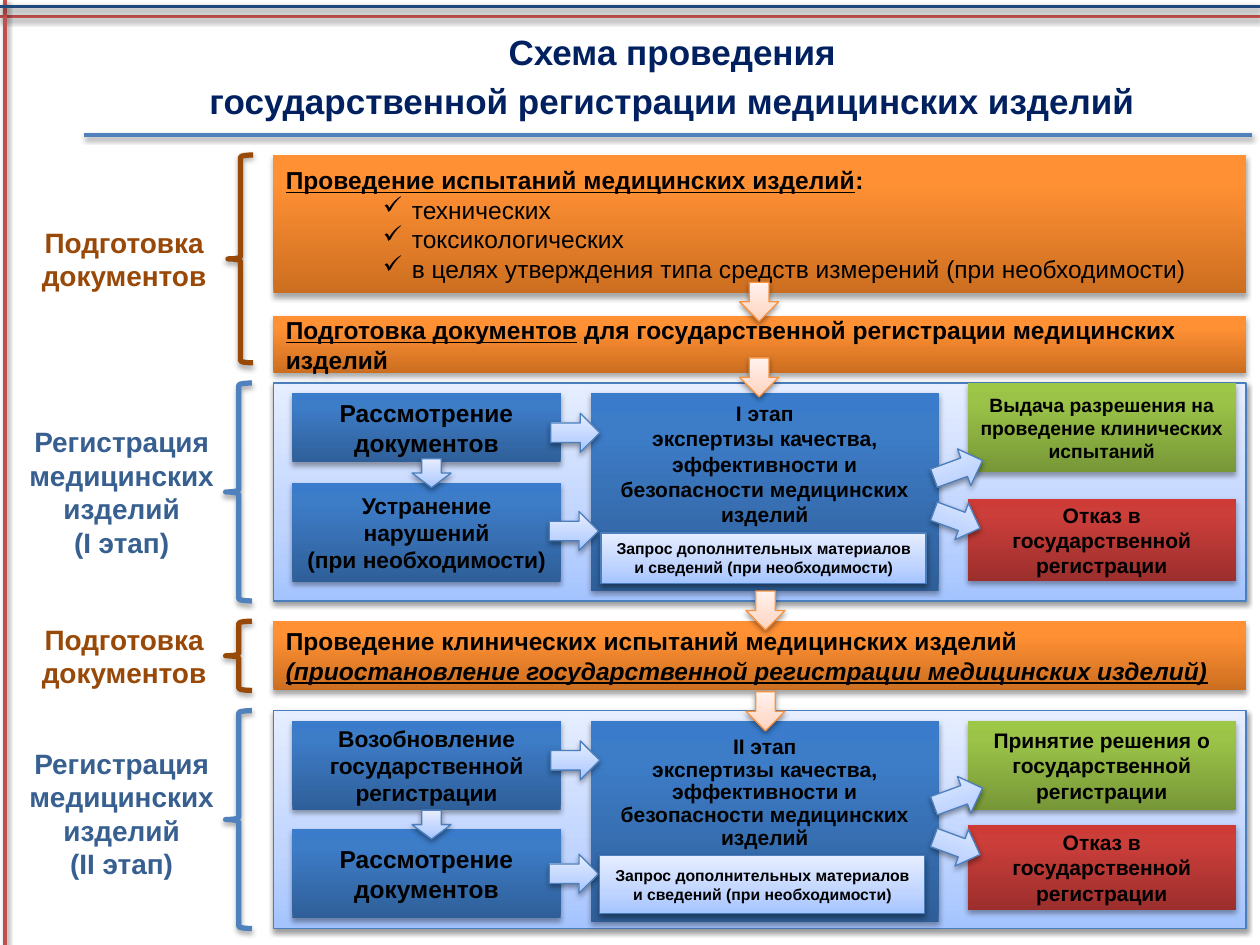
from collections import namedtuple

from lxml.etree import SubElement
from pptx import Presentation
from pptx.dml.color import RGBColor
from pptx.enum.shapes import MSO_CONNECTOR, MSO_SHAPE
from pptx.enum.text import MSO_ANCHOR, PP_ALIGN
from pptx.oxml.ns import qn
from pptx.util import Inches, Pt

BLACK = RGBColor(0x00, 0x00, 0x00)
NAVY = RGBColor(0x00, 0x20, 0x60)
DARK_BLUE = RGBColor(0x1F, 0x49, 0x7D)
LABEL_BLUE = RGBColor(0x37, 0x60, 0x91)
ACCENT_BLUE = RGBColor(0x4F, 0x81, 0xBD)
BORDER_BLUE = RGBColor(0x4B, 0x7E, 0xBC)
BORDER_ORANGE = RGBColor(0xF6, 0x92, 0x40)
BROWN = RGBColor(0x98, 0x48, 0x07)
RED_LINE = RGBColor(0xC0, 0x50, 0x4D)

Look = namedtuple("Look", "colors middle border")
ORANGE = Look((RGBColor(0xCC, 0x6E, 0x20), RGBColor(0xFF, 0x90, 0x34),
               RGBColor(0xFF, 0x91, 0x36)), 80, None)
BLUE = Look((RGBColor(0x2F, 0x5F, 0x99), RGBColor(0x3D, 0x7C, 0xC7),
             RGBColor(0x3A, 0x7C, 0xCB)), 80, None)
GREEN = Look((RGBColor(0x77, 0x97, 0x37), RGBColor(0x9B, 0xC3, 0x48),
              RGBColor(0x9D, 0xC7, 0x46)), 80, None)
RED = Look((RGBColor(0x9C, 0x2F, 0x2D), RGBColor(0xCB, 0x3E, 0x3A),
            RGBColor(0xCE, 0x3B, 0x37)), 80, None)
PALE_BLUE = Look((RGBColor(0xA4, 0xC4, 0xFF), RGBColor(0xBF, 0xD4, 0xFF),
                  RGBColor(0xE6, 0xEE, 0xFF)), 35, BORDER_BLUE)
PEACH = Look((RGBColor(0xFF, 0xD2, 0xBD), RGBColor(0xFF, 0xDE, 0xD0),
              RGBColor(0xFF, 0xF2, 0xED)), 35, BORDER_ORANGE)

Run = namedtuple("Run", "text bold italic underline", defaults=(True, False, False))
Bullet = namedtuple("Bullet", "text")

Stage = namedtuple("Stage", "top label_top number first second expertise_height spacing "
                            "request granted refused arrow_tops")
Box = namedtuple("Box", "text size top height")

LEFT, WIDTH, STAGE_HEIGHT = 2.17, 7.72, 1.73
STEP_LEFT, OUTCOME_LEFT, SIDE_WIDTH = 2.32, 7.68, 2.13
REFUSAL = "Отказ в государственной регистрации"
REVIEW = "Рассмотрение документов"

STAGES = [
    Stage(3.04, 3.04, "I", Box([REVIEW], 14, 3.12, 0.55),
          Box(["Устранение нарушений", "(при необходимости)"], 13, 3.83, 0.79),
          1.57, 1.0, (4.77, 4.23, 0.4),
          Box(["Выдача разрешения на проведение клинических испытаний"], 11, 3.04, 0.71),
          Box([REFUSAL], 12, 3.96, 0.65), (3.28, 4.06, 3.64, 3.57, 3.97)),
    Stage(5.64, 5.59, "II",
          Box(["Возобновление государственной регистрации"], 13, 5.72, 0.71),
          Box([REVIEW], 14, 6.58, 0.71),
          1.6, 0.9, (4.76, 6.79, 0.46),
          Box(["Принятие решения о государственной регистрации"], 12, 5.72, 0.71),
          Box([REFUSAL], 12, 6.55, 0.67), (5.88, 6.78, 6.43, 6.17, 6.56)),
]


class SchemeSlide:
    font_name = "Arial"

    def __init__(self, presentation):
        self.slide = presentation.slides.add_slide(presentation.slide_layouts[6])

    def add_shadow(self, shape, soft):
        properties = shape._element.spPr
        effects = properties.find(qn("a:effectLst"))
        if effects is None:
            effects = SubElement(properties, qn("a:effectLst"))
        shadow = SubElement(effects, qn("a:outerShdw"), blurRad="40000",
                            dist="20000" if soft else "23000", dir="5400000", rotWithShape="0")
        color = SubElement(shadow, qn("a:srgbClr"), val=str(BLACK))
        SubElement(color, qn("a:alpha"), val="38000" if soft else "35000")

    def line(self, x1, y1, x2, y2, color):
        connector = self.slide.shapes.add_connector(
            MSO_CONNECTOR.STRAIGHT, Inches(x1), Inches(y1), Inches(x2), Inches(y2))
        connector.line.color.rgb = color
        connector.line.width = Pt(2)
        self.add_shadow(connector, soft=True)

    def shape(self, left, top, width, height, look, kind=MSO_SHAPE.RECTANGLE, rotation=0):
        shape = self.slide.shapes.add_shape(
            kind, Inches(left), Inches(top), Inches(width), Inches(height))
        shape.rotation = rotation
        shape.fill.gradient()
        shape.fill.gradient_angle = 90
        stops = shape._element.spPr.find(qn("a:gradFill")).find(qn("a:gsLst"))
        for stop in list(stops):
            stops.remove(stop)
        for position, color in zip((0, look.middle, 100), look.colors):
            stop = SubElement(stops, qn("a:gs"), pos=str(position * 1000))
            SubElement(stop, qn("a:srgbClr"), val=str(color))
        if look.border is None:
            shape.line.fill.background()
        else:
            shape.line.color.rgb = look.border
            shape.line.width = Pt(0.75)
        shape.shadow.inherit = False
        self.add_shadow(shape, soft=look.border is not None)
        return shape

    def brace(self, left, top, width, height, color):
        brace = self.slide.shapes.add_shape(
            MSO_SHAPE.RIGHT_BRACE, Inches(left), Inches(top), Inches(width), Inches(height))
        brace._element.spPr.find(qn("a:xfrm")).set("flipH", "1")
        brace.fill.background()
        brace.line.color.rgb = color
        brace.line.width = Pt(3)
        brace.shadow.inherit = False
        self.add_shadow(brace, soft=False)

    def put_text(self, shape, paragraphs, size, color=BLACK, align=PP_ALIGN.CENTER,
                 spacing=1.0, gap=0):
        """Fill a shape; a paragraph is a string, a Bullet or a list of Runs."""
        frame = shape.text_frame
        frame.word_wrap = True
        frame.vertical_anchor = MSO_ANCHOR.MIDDLE
        for index, content in enumerate(paragraphs):
            paragraph = frame.add_paragraph() if index else frame.paragraphs[0]
            paragraph.alignment = align
            paragraph.line_spacing = spacing
            if index and gap:
                paragraph.space_before = Pt(gap)
            if isinstance(content, Bullet):
                properties = paragraph._p.get_or_add_pPr()
                properties.set("marL", str(Inches(1)))
                properties.set("indent", str(Inches(-0.23)))
                SubElement(properties, qn("a:buChar"), char="✓")
                content = [Run(content.text, bold=False)]
            elif isinstance(content, str):
                content = [Run(content)]
            for item in content:
                run = paragraph.add_run()
                run.text = item.text
                font = run.font
                font.name, font.size = self.font_name, Pt(size)
                font.bold, font.italic, font.underline = item.bold, item.italic, item.underline
                font.color.rgb = color

    def text(self, left, top, width, height, paragraphs, size, color, gap=0):
        box = self.slide.shapes.add_textbox(
            Inches(left), Inches(top), Inches(width), Inches(height))
        self.put_text(box, paragraphs, size, color, gap=gap)

    def box(self, left, width, box, look):
        self.put_text(self.shape(left, box.top, width, box.height, look), box.text, box.size)

    def band(self, top, height, paragraphs):
        self.put_text(self.shape(LEFT, top, WIDTH, height, ORANGE), paragraphs, 14,
                      align=PP_ALIGN.LEFT)

    def stage(self, stage):
        self.shape(LEFT, stage.top, WIDTH, STAGE_HEIGHT, PALE_BLUE)
        self.text(0.12, stage.label_top, 1.69, STAGE_HEIGHT,
                  ["Регистрация медицинских изделий", f"({stage.number} этап)"], 16, LABEL_BLUE)
        self.brace(1.79, stage.top, 0.21, STAGE_HEIGHT, ACCENT_BLUE)
        self.box(STEP_LEFT, SIDE_WIDTH, stage.first, BLUE)
        self.box(STEP_LEFT, SIDE_WIDTH, stage.second, BLUE)
        expertise = self.shape(4.69, stage.top + 0.08, 2.76, stage.expertise_height, BLUE)
        expertise.text_frame.margin_bottom = Inches(0.5)
        self.put_text(expertise, [
            f"{stage.number} этап",
            "экспертизы качества, эффективности и безопасности медицинских изделий",
        ], 12, spacing=stage.spacing)
        self.box(OUTCOME_LEFT, SIDE_WIDTH, stage.granted, GREEN)
        self.box(OUTCOME_LEFT, SIDE_WIDTH, stage.refused, RED)
        first, second, down, granted, refused = stage.arrow_tops
        right_arrow = MSO_SHAPE.RIGHT_ARROW
        self.shape(4.37, first, 0.39, 0.31, PALE_BLUE, right_arrow)
        self.shape(4.36, second, 0.39, 0.31, PALE_BLUE, right_arrow)
        self.shape(3.27, down, 0.31, 0.23, PALE_BLUE, MSO_SHAPE.DOWN_ARROW)
        self.shape(7.4, granted, 0.41, 0.31, PALE_BLUE, right_arrow, 340)
        self.shape(7.4, refused, 0.39, 0.31, PALE_BLUE, right_arrow, 20.3)
        left, top, height = stage.request
        self.box(left, 2.58, Box(
            ["Запрос дополнительных материалов и сведений (при необходимости)"],
            9, top, height), PALE_BLUE)


def main():
    presentation = Presentation()
    presentation.slide_width, presentation.slide_height = Inches(10), Inches(7.5)
    scheme = SchemeSlide(presentation)

    scheme.line(10, 0.13, 0, 0.13, RED_LINE)
    scheme.line(0.04, 0, 0.04, 7.5, RED_LINE)
    scheme.line(0, 0.05, 10, 0.05, DARK_BLUE)
    scheme.text(0.67, 0.13, 9.33, 0.94, [
        "Схема проведения", "государственной регистрации медицинских изделий"], 20, NAVY, gap=4)
    scheme.line(0.67, 1.07, 9.94, 1.07, ACCENT_BLUE)

    for stage in STAGES:
        scheme.stage(stage)

    scheme.band(1.23, 1.1, [
        [Run("Проведение испытаний медицинских изделий", underline=True), Run(":")],
        Bullet("технических"), Bullet("токсикологических"),
        Bullet("в целях утверждения типа средств измерений (при необходимости)")])
    scheme.band(2.51, 0.45, [
        [Run("Подготовка документов", underline=True),
         Run(" для государственной регистрации медицинских изделий")]])
    scheme.band(4.93, 0.55, [
        "Проведение клинических испытаний медицинских изделий",
        [Run("(приостановление государственной регистрации медицинских изделий)",
             italic=True, underline=True)]])

    for top, height in ((1.19, 1.73), (4.89, 0.63)):
        scheme.text(0.16, top, 1.65, height, ["Подготовка документов"], 16, BROWN)
    scheme.brace(1.81, 1.23, 0.2, 1.65, BROWN)
    scheme.brace(1.79, 4.93, 0.21, 0.55, BROWN)

    for left, top in ((5.87, 2.24), (5.87, 2.84), (5.92, 4.69), (5.92, 5.49)):
        scheme.shape(left, top, 0.31, 0.31, PEACH, MSO_SHAPE.DOWN_ARROW)

    presentation.save("out.pptx")


if __name__ == "__main__":
    main()
